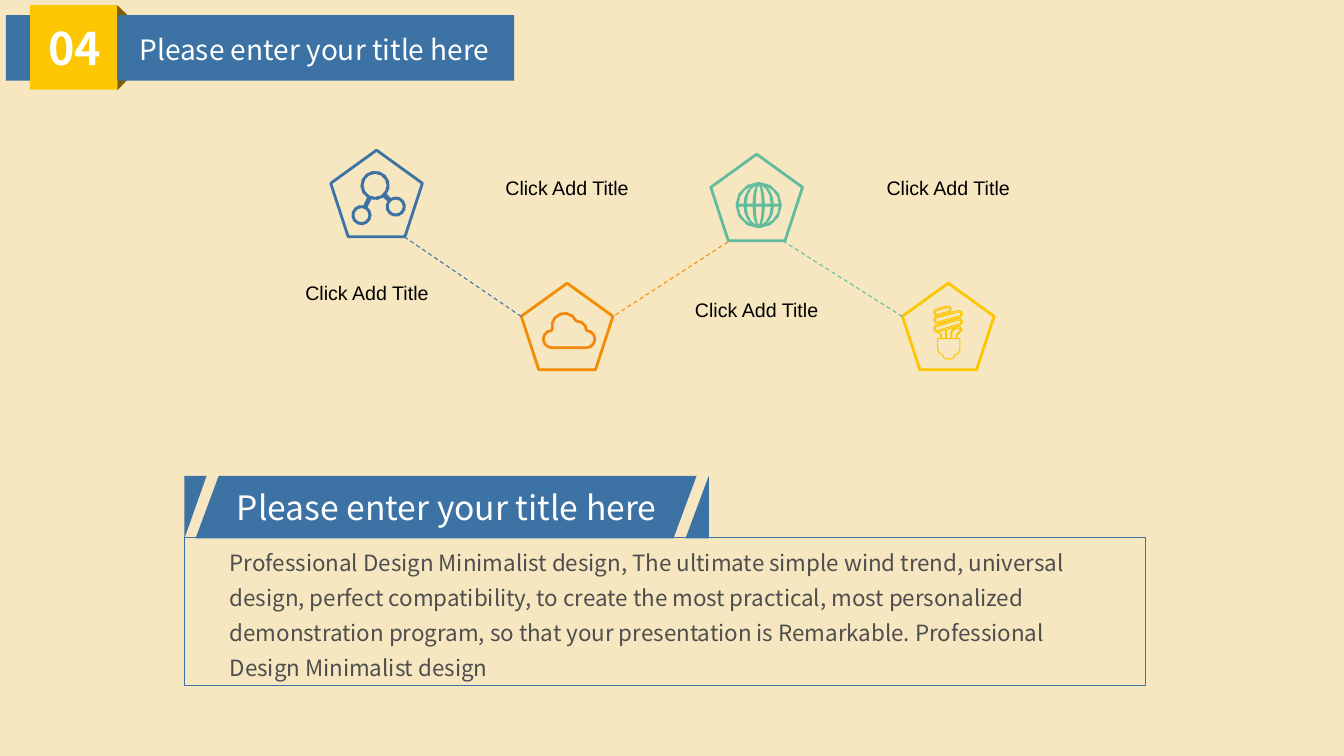
from dataclasses import dataclass
from math import ceil, cos, radians, sin

from lxml.etree import SubElement
from pptx import Presentation
from pptx.dml.color import RGBColor
from pptx.enum.dml import MSO_LINE
from pptx.enum.shapes import MSO_CONNECTOR, MSO_SHAPE as SHP
from pptx.enum.text import MSO_ANCHOR as ANC, MSO_AUTO_SIZE as FIT, PP_ALIGN as AL
from pptx.oxml.ns import qn
from pptx.util import Inches, Pt

BLUE, ORANGE, TEAL, YELLOW = "3C72A4", "F48C06", "63BC9E", "FDC602"
WHITE, BLACK, GREY, BROWN = "FFFFFF", "000000", "4E4E4E", "7F6000"
SANS = "Noto Sans CJK SC"
TITLE = "Please enter your title here"
BODY = (
    "Professional Design Minimalist design, The ultimate simple wind trend, "
    "universal design, perfect compatibility, to create the most practical, "
    "most personalized demonstration program, so that your presentation is "
    "Remarkable. Professional Design Minimalist design"
)

Points = list[tuple[float, float]]


@dataclass
class Step:
    left: float
    top: float
    color: str
    icon: list[Points]
    icon_fill: str | None


@dataclass
class Link:
    x1: float
    y1: float
    x2: float
    y2: float
    color: str


@dataclass
class Label:
    left: float
    top: float
    width: float


@dataclass
class Block:
    kind: SHP
    left: float
    top: float
    width: float
    height: float
    color: str
    rotation: int = 0


def rgb(color: str) -> RGBColor:
    return RGBColor.from_string(color)


def arc(cx: float, cy: float, rx: float, ry: float, start: float, end: float) -> Points:
    n = ceil(abs(end - start) / 30)
    angles = [radians(start + (end - start) * i / n) for i in range(n + 1)]
    return [(cx + rx * cos(a), cy + ry * sin(a)) for a in angles]


def ring(cx: float, cy: float, r: float, start: float = 0, end: float = 360) -> Points:
    return arc(cx, cy, r, r, start, end)


def network_icon() -> list[Points]:
    hub, right, left = (3.72, 1.84), (3.925, 2.05), (3.585, 2.135)
    outline = (ring(*hub, 0.14, 54, 107) + ring(*left, 0.095, 305, 644)
               + ring(*hub, 0.14, 122, 398) + ring(*right, 0.095, 237, 575))
    return [outline, ring(*hub, 0.12), ring(*left, 0.075), ring(*right, 0.075)]


def globe_icon() -> list[Points]:
    cx, cy, r, inner = 7.525, 2.035, 0.225, 0.205
    parts = [ring(cx, cy, r)]
    for sy in (-1, 1):
        y, ry = cy + sy * 0.01, sy * (inner - 0.01)
        parts.append(arc(cx, y, 0.035, ry, 0, 180))
        for sx in (-1, 1):
            parts.append(arc(cx, y, sx * 0.125, ry, 0, 78) + arc(cx, y, sx * 0.055, ry, 65, 0))
            parts.append(arc(cx, y, sx * inner, ry, 0, 70) + arc(cx, y, sx * 0.145, ry, 61, 0))
    return parts


def cloud_outline(inset: float) -> Points:
    r = 0.095 - inset
    return (ring(5.475, 3.365, r, 90, 270) + ring(5.6, 3.235, 0.135 - inset, 165, 336)
            + ring(5.73, 3.275, r, 270, 360) + ring(5.815, 3.365, r, 270, 450))


def tube(x1: float, y1: float, x2: float, y2: float) -> list[Points]:
    return [ring(x1, y1, r, 73, 253) + ring(x2, y2, r, 253, 433) for r in (0.035, 0.02)]


def bulb_icon() -> list[Points]:
    base = [(9.3, 3.36), (9.52, 3.36), (9.52, 3.47), (9.5, 3.51), (9.47, 3.52), (9.46, 3.55),
            (9.44, 3.56), (9.39, 3.56), (9.36, 3.55), (9.35, 3.52), (9.32, 3.51), (9.3, 3.47)]
    left_stem = [(9.29, 3.29), (9.33, 3.32), (9.33, 3.36), (9.34, 3.36), (9.34, 3.32)]
    middle_stem = [(9.38, 3.36), (9.38, 3.28), (9.39, 3.27), (9.39, 3.36)]
    right_stem = [(9.43, 3.36), (9.43, 3.29), (9.45, 3.26), (9.51, 3.24), (9.54, 3.26),
                  (9.54, 3.28), (9.49, 3.33), (9.49, 3.36), (9.48, 3.36), (9.48, 3.33),
                  (9.53, 3.27), (9.51, 3.26), (9.46, 3.27), (9.44, 3.29), (9.44, 3.36)]
    return (tube(9.295, 3.1, 9.4, 3.07) + tube(9.295, 3.175, 9.51, 3.115)
            + tube(9.295, 3.26, 9.51, 3.195) + [base, left_stem, middle_stem, right_stem])


STEPS = [
    Step(3.28, 1.49, BLUE, network_icon(), BLUE),
    Step(8.95, 2.81, YELLOW, bulb_icon(), None),
    Step(7.05, 1.53, TEAL, globe_icon(), TEAL),
    Step(5.17, 2.81, ORANGE, [cloud_outline(0), cloud_outline(0.018)], "ED7D31"),
]
LINKS = [
    Link(4.01, 2.35, 5.17, 3.14, BLUE),
    Link(7.22, 2.4, 6.08, 3.14, ORANGE),
    Link(8.95, 3.14, 7.78, 2.4, TEAL),
]
LABELS = [Label(2.67, 2.74, 1.94), Label(4.56, 1.7, 2.13),
          Label(6.44, 2.91, 2.13), Label(8.34, 1.7, 2.13)]
HEADER = [
    Block(SHP.ISOSCELES_TRIANGLE, 1.16, 0.05, 0.19, 0.18, BROWN),
    Block(SHP.ISOSCELES_TRIANGLE, 1.16, 0.71, 0.19, 0.18, BROWN, 90),
    Block(SHP.RECTANGLE, 0.06, 0.15, 5.04, 0.65, BLUE),
    Block(SHP.RECTANGLE, 0.3, 0.05, 0.86, 0.84, YELLOW),
]
BANNER = [
    [(1.83, 4.72), (2.05, 4.72), (1.83, 5.34)],
    [(2.17, 4.72), (6.91, 4.72), (6.68, 5.34), (1.94, 5.34)],
    [(7.03, 4.72), (7.03, 5.34), (6.8, 5.34)],
]


def style(sp, fill: str | None = None, line: str | None = None, width: float = 0.75):
    sp.shadow.inherit = False
    if fill:
        sp.fill.solid()
        sp.fill.fore_color.rgb = rgb(fill)
    else:
        sp.fill.background()
    if line:
        sp.line.color.rgb = rgb(line)
        sp.line.width = Pt(width)
    else:
        sp.line.fill.background()
    return sp


def add_shape(s, kind: SHP, left: float, top: float, width: float, height: float):
    return s.shapes.add_shape(kind, *map(Inches, (left, top, width, height)))


def add_outline(s, parts: list[Points]):
    scaled = [[(Inches(x), Inches(y)) for x, y in part] for part in parts]
    fb = s.shapes.build_freeform(*scaled[0][0])
    fb.add_line_segments(scaled[0][1:])
    for part in scaled[1:]:
        fb.move_to(*part[0])
        fb.add_line_segments(part[1:])
    return fb.convert_to_shape()


def add_text(s, left: float, top: float, width: float, height: float):
    sp = s.shapes.add_textbox(*map(Inches, (left, top, width, height)))
    sp.text_frame.auto_size = FIT.SHAPE_TO_FIT_TEXT
    return sp


def write(sp, text: str, size: int, color: str, font: str = SANS, bold: bool = False,
          align: AL = AL.CENTER, anchor: ANC = ANC.MIDDLE, wrap: bool = True):
    tf = sp.text_frame
    tf.word_wrap, tf.vertical_anchor = wrap, anchor
    p = tf.paragraphs[0]
    p.text, p.alignment = text, align
    p.font.name, p.font.size, p.font.bold = font, Pt(size), bold
    p.font.color.rgb = rgb(color)
    return p


def add_link(s, link: Link) -> None:
    ends = map(Inches, (link.x1, link.y1, link.x2, link.y2))
    cx = s.shapes.add_connector(MSO_CONNECTOR.STRAIGHT, *ends)
    cx.line.color.rgb = rgb(link.color)
    cx.line.width = Pt(0.75)
    cx.line.dash_style = MSO_LINE.DASH
    SubElement(cx._element.spPr, qn("a:effectLst"))


def main() -> None:
    prs = Presentation()
    prs.slide_width, prs.slide_height = Inches(13.33), Inches(7.5)
    s = prs.slides.add_slide(prs.slide_layouts[6])
    s.background.fill.solid()
    s.background.fill.fore_color.rgb = rgb("F6E7C0")

    for step in STEPS:
        pentagon = add_shape(s, SHP.REGULAR_PENTAGON, step.left, step.top, 0.91, 0.86)
        style(pentagon, line=step.color, width=2)
        style(add_outline(s, step.icon), step.icon_fill, step.color)
    for link in LINKS:
        add_link(s, link)
    for label in LABELS:
        sp = add_text(s, label.left, label.top, label.width, 0.34)
        write(sp, "Click Add Title", 14, BLACK, font="Arial", anchor=ANC.TOP)

    write(style(add_outline(s, BANNER), BLUE), TITLE, 24, WHITE)
    style(add_shape(s, SHP.RECTANGLE, 1.83, 5.33, 9.53, 1.47), line=BLUE, width=1)
    p = write(add_text(s, 2.18, 5.34, 8.96, 1.45), BODY, 16, GREY, align=AL.LEFT)
    p.line_spacing, p.space_before, p.space_after = 1.3, Pt(6), Pt(6)

    for b in HEADER:
        sp = style(add_shape(s, b.kind, b.left, b.top, b.width, b.height), b.color)
        sp.rotation = b.rotation
        if b.kind == SHP.ISOSCELES_TRIANGLE:
            sp.adjustments[0] = 0
    write(add_text(s, 0.36, 0.16, 0.76, 0.64), "04", 32, WHITE, bold=True,
          anchor=ANC.TOP, wrap=False)
    title = style(add_shape(s, SHP.ROUNDED_RECTANGLE, 0.92, 0.21, 4.4, 0.55))
    title.adjustments[0] = 0.09
    write(title, TITLE, 20, WHITE)
    prs.save("out.pptx")


if __name__ == "__main__":
    main()
